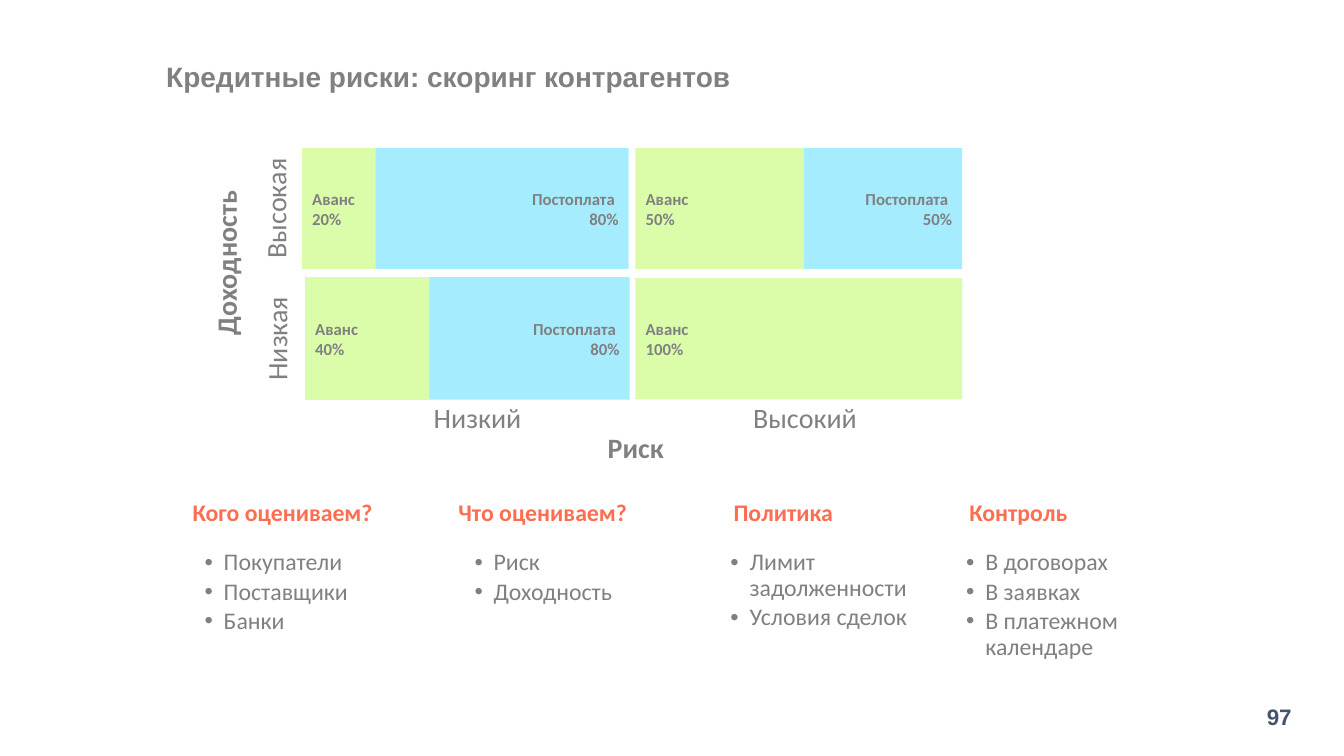
"""Build the slide on credit risk and counterparty scoring."""
import pptx
import pptx.dml.color
import pptx.enum.shapes
import pptx.enum.text
import pptx.oxml
import pptx.oxml.ns
import pptx.util

Pt = pptx.util.Pt
Align = pptx.enum.text.PP_ALIGN
Anchor = pptx.enum.text.MSO_ANCHOR
GREY, ORANGE, NAVY = "808080", "FC6E51", "44546A"
BLUE, GREEN = "A6ECFF", "DBFDAA"


def color(hex_value):
    """Turn a hex string into a colour."""
    return pptx.dml.color.RGBColor.from_string(hex_value)


def write(shape, lines, size, hex_value=GREY, bold=False, align=Align.LEFT,
          anchor=Anchor.MIDDLE, font="Calibri", spacing=1, after=0,
          insets=(7.2, 3.6, 7.2, 3.6), bullets=False, wrap=True):
    """Fill a shape with evenly formatted paragraphs."""
    frame = shape.text_frame
    frame.text = "\n".join(lines)
    frame.auto_size = pptx.enum.text.MSO_AUTO_SIZE.NONE
    frame.word_wrap = wrap
    frame.vertical_anchor = anchor
    frame.margin_left, frame.margin_top, frame.margin_right, frame.margin_bottom = map(Pt, insets)
    for paragraph in frame.paragraphs:
        if bullets:
            properties = paragraph._p.get_or_add_pPr()
            properties.set("marL", str(Pt(13.7)))
            properties.set("indent", str(-Pt(13.7)))
            for tag, name, value in (("buFont", "typeface", "Arial"), ("buChar", "char", "•")):
                element = pptx.oxml.parse_xml(f"<a:{tag} {pptx.oxml.ns.nsdecls('a')}/>")
                element.set(name, value)
                properties.append(element)
        paragraph.alignment = align
        paragraph.line_spacing = spacing
        paragraph.space_before = Pt(0)
        paragraph.space_after = Pt(after)
        paragraph.font.name = font
        paragraph.font.size = Pt(size)
        paragraph.font.bold = bold
        paragraph.font.color.rgb = color(hex_value)


presentation = pptx.Presentation()
presentation.slide_width, presentation.slide_height = Pt(960.5), Pt(540)
slide = presentation.slides.add_slide(presentation.slide_layouts.get_by_name("Comparison"))
title, *bodies = slide.placeholders

title.left, title.top, title.width, title.height = map(Pt, (111.6, 3.6, 782.6, 104.4))
write(title, ["Кредитные риски: скоринг контрагентов"], 20, bold=True, font="Arial", spacing=0.9)

number = slide.shapes.add_textbox(Pt(858.2), Pt(496.8), Pt(72), Pt(28))
write(number, ["97"], 16, NAVY, bold=True, align=Align.RIGHT, anchor=Anchor.TOP,
      font="Arial", spacing=1.1)

topics = [
    ("Кого оцениваем?", 128.2, 139, ["Покупатели", "Поставщики", "Банки"]),
    ("Что оцениваем?", 318.2, 331.9, ["Риск", "Доходность"]),
    ("Политика", 514.8, 514.8, ["Лимит задолженности", "Условия сделок"]),
    ("Контроль", 683.3, 683.3, ["В договорах", "В заявках", "В платежном календаре"]),
]
for body, (heading, heading_left, list_left, items) in zip(bodies, topics):
    heading_box = slide.shapes.add_textbox(Pt(heading_left), Pt(347.8), Pt(170), Pt(38.9))
    write(heading_box, [heading], 17, ORANGE, bold=True, spacing=0.9,
          insets=(9.4, 5.8, 9.4, 5.8))
    body.left, body.top, body.width, body.height = map(Pt, (list_left, 385.9, 148.3, 100.8))
    write(body, items, 17, anchor=Anchor.TOP, spacing=0.9, after=2.55,
          insets=(7.2, 7.2, 9.4, 10.8), bullets=True)

axis_labels = [
    ("Риск", 454.3, 319.7, 0, True),
    ("Низкий", 341.3, 298.1, 0, False),
    ("Высокий", 575.3, 298.1, 0, False),
    ("Доходность", 161.3, 187.9, 270, True),
    ("Высокая", 196.6, 149, 270, False),
    ("Низкая", 197.3, 241.9, 270, False),
]
for label, center_x, center_y, rotation, bold in axis_labels:
    label_box = slide.shapes.add_textbox(Pt(center_x - 60), Pt(center_y - 15.8), Pt(120), Pt(31.6))
    label_box.rotation = rotation
    write(label_box, [label], 20, bold=bold, align=Align.CENTER, wrap=False)

quadrants = [
    (216, 105.8, 233.3, 86.4, 52.5, "20%", "80%"),
    (454.3, 105.8, 233.3, 86.4, 120.2, "50%", "50%"),
    (218.2, 198, 231.8, 87.5, 88.6, "40%", "80%"),
    (454.3, 198.7, 233.3, 86.4, 233.3, "100%", None),
]
for left, top, width, height, advance_width, advance, deferred in quadrants:
    parts = [
        (width, BLUE, f"Постоплата \v{deferred}" if deferred else "", Align.RIGHT),
        (advance_width, GREEN, f"Аванс \v{advance}", Align.LEFT),
    ]
    for part_width, fill, text, align in parts:
        part = slide.shapes.add_shape(pptx.enum.shapes.MSO_SHAPE.RECTANGLE,
                                      Pt(left), Pt(top), Pt(part_width), Pt(height))
        part.shadow.inherit = False
        part.fill.solid()
        part.fill.fore_color.rgb = color(fill)
        part.line.fill.background()
        write(part, [text], 12, bold=True, align=align)

presentation.save("out.pptx")
